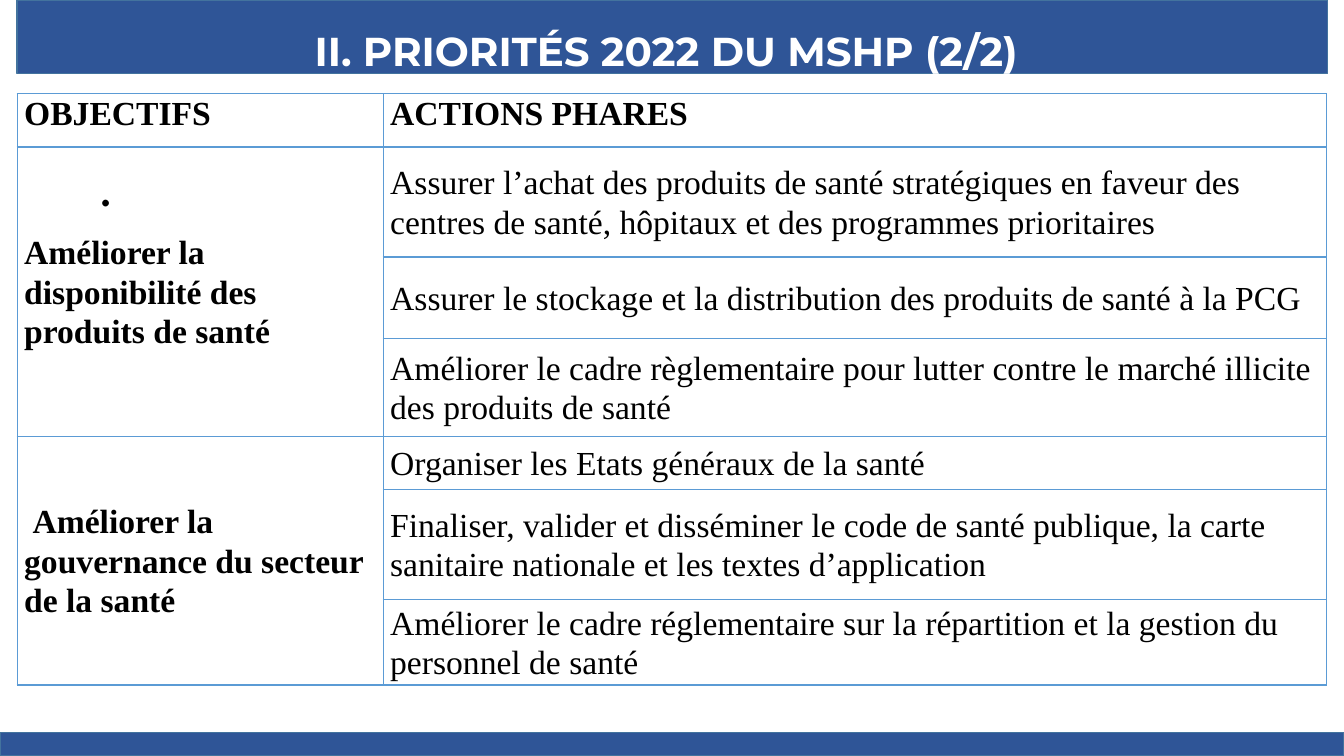
"""Build the slide on the 2022 priorities: title band, objectives table and footer band."""
from lxml import etree
from pptx import Presentation
from pptx.dml.color import RGBColor
from pptx.enum.shapes import MSO_SHAPE
from pptx.enum.text import MSO_ANCHOR, PP_ALIGN
from pptx.oxml.ns import qn
from pptx.util import Inches, Pt

RECTANGLE = MSO_SHAPE.RECTANGLE
TOP, MIDDLE = MSO_ANCHOR.TOP, MSO_ANCHOR.MIDDLE
LEFT, CENTER = PP_ALIGN.LEFT, PP_ALIGN.CENTER

COLORS = {
    "band": "2F5597",
    "band_line": "43739E",
    "grid": "5B9BD5",
    "text": "000000",
    "title": "FFFFFF",
}
COLUMN_WIDTHS = [3.63, 9.36]
ROW_HEIGHTS = [0.53, 1.09, 0.81, 0.97, 0.53, 1.09, 0.81]
HEADINGS = ["OBJECTIFS", "ACTIONS PHARES"]
PRIORITIES = [
    ("Améliorer la disponibilité des produits de santé", [
        "Assurer l’achat des produits de santé stratégiques en faveur des centres de santé, "
        "hôpitaux et des programmes prioritaires",
        "Assurer le stockage et la distribution des produits de santé à la PCG",
        "Améliorer le cadre règlementaire pour lutter contre le marché illicite "
        "des produits de santé",
    ]),
    ("\N{NO-BREAK SPACE}Améliorer la gouvernance du secteur de la santé", [
        "Organiser les Etats généraux de la santé",
        "Finaliser, valider et disséminer le code de santé publique, la carte sanitaire "
        "nationale et les textes d’application",
        "Améliorer le cadre réglementaire sur la répartition et la gestion du "
        "personnel de santé",
    ]),
]


def rgb(name):
    """Return the named colour."""
    return RGBColor.from_string(COLORS[name])


def write_text(frame, text, *, font="Times New Roman", size=24, bold=False, color="text",
               align=LEFT, line_spacing=1.06, before=0, after=0):
    """Write one formatted paragraph into a text frame."""
    frame.word_wrap = True
    paragraph = frame.paragraphs[0]
    paragraph.alignment = align
    paragraph.line_spacing = line_spacing
    paragraph.space_before, paragraph.space_after = Pt(before), Pt(after)
    run = paragraph.add_run()
    run.text = text
    run.font.name, run.font.size, run.font.bold = font, Pt(size), bold
    run.font.color.rgb = rgb(color)


def add_band(slide, left, top, width, height):
    """Draw a solid blue band."""
    band = slide.shapes.add_shape(
        RECTANGLE, Inches(left), Inches(top), Inches(width), Inches(height))
    band.shadow.inherit = False
    band.fill.solid()
    band.fill.fore_color.rgb = rgb("band")
    band.line.color.rgb = rgb("band_line")
    band.line.width = Pt(1)


def add_label(slide, text, left, top, width, height, anchor=TOP, **text_format):
    """Place a text box holding one paragraph."""
    label = slide.shapes.add_textbox(
        Inches(left), Inches(top), Inches(width), Inches(height))
    label.text_frame.vertical_anchor = anchor
    write_text(label.text_frame, text, **text_format)


def set_borders(cell, bottom=1, top=1):
    """Give a cell its four border lines."""
    widths = {"a:lnL": 1, "a:lnR": 1, "a:lnT": top, "a:lnB": bottom}
    properties = cell._tc.get_or_add_tcPr()
    for position, (side, width) in enumerate(widths.items()):
        border = etree.Element(qn(side), w=str(Pt(width)))
        fill = etree.SubElement(border, qn("a:solidFill"))
        etree.SubElement(fill, qn("a:srgbClr"), val=COLORS["grid"])
        properties.insert(position, border)


def fill_cell(cell, text, anchor=MIDDLE, bold=False):
    """Write the text of a table cell and set its margins."""
    cell.margin_left = cell.margin_right = Inches(0.07)
    cell.margin_top = cell.margin_bottom = 0
    cell.vertical_anchor = anchor
    write_text(cell.text_frame, text, bold=bold, after=8)


def add_priorities(slide):
    """Add the table of objectives and their key actions."""
    table = slide.shapes.add_table(
        len(ROW_HEIGHTS), len(COLUMN_WIDTHS), Inches(0.17), Inches(0.93),
        Inches(sum(COLUMN_WIDTHS)), Inches(sum(ROW_HEIGHTS))).table
    table.first_row = table.horz_banding = False
    for column, width in zip(table.columns, COLUMN_WIDTHS):
        column.width = Inches(width)
    for index, (row, height) in enumerate(zip(table.rows, ROW_HEIGHTS)):
        row.height = Inches(height)
        for cell in row.cells:
            cell.fill.background()
            set_borders(cell, bottom=2 if index == 0 else 1, top=2 if index == 1 else 1)
    for column, heading in enumerate(HEADINGS):
        fill_cell(table.cell(0, column), heading, anchor=TOP, bold=True)
    first = 1
    for objective, actions in PRIORITIES:
        last = first + len(actions) - 1
        table.cell(first, 0).merge(table.cell(last, 0))
        fill_cell(table.cell(first, 0), objective, bold=True)
        for offset, action in enumerate(actions):
            fill_cell(table.cell(first + offset, 1), action)
        first = last + 1


def main():
    """Build and save the slide."""
    deck = Presentation()
    deck.slide_width, deck.slide_height = Inches(13.33), Inches(7.5)
    slide = deck.slides.add_slide(deck.slide_layouts[6])
    add_band(slide, 0.17, 0, 13, 0.73)
    add_band(slide, 0, 7.27, 13.33, 0.23)
    add_label(slide, "II. PRIORITÉS 2022 DU MSHP (2/2) ", 1.8, 0.28, 9.73, 0.5,
              anchor=MIDDLE, font="Montserrat", size=28.8, bold=True, color="title",
              align=CENTER, line_spacing=0.9)
    add_label(slide, ".", 0.88, 1.52, 11.93, 3.03, font="Calibri", size=40,
              line_spacing=0.9, before=10)
    add_priorities(slide)
    deck.save("out.pptx")


if __name__ == "__main__":
    main()
